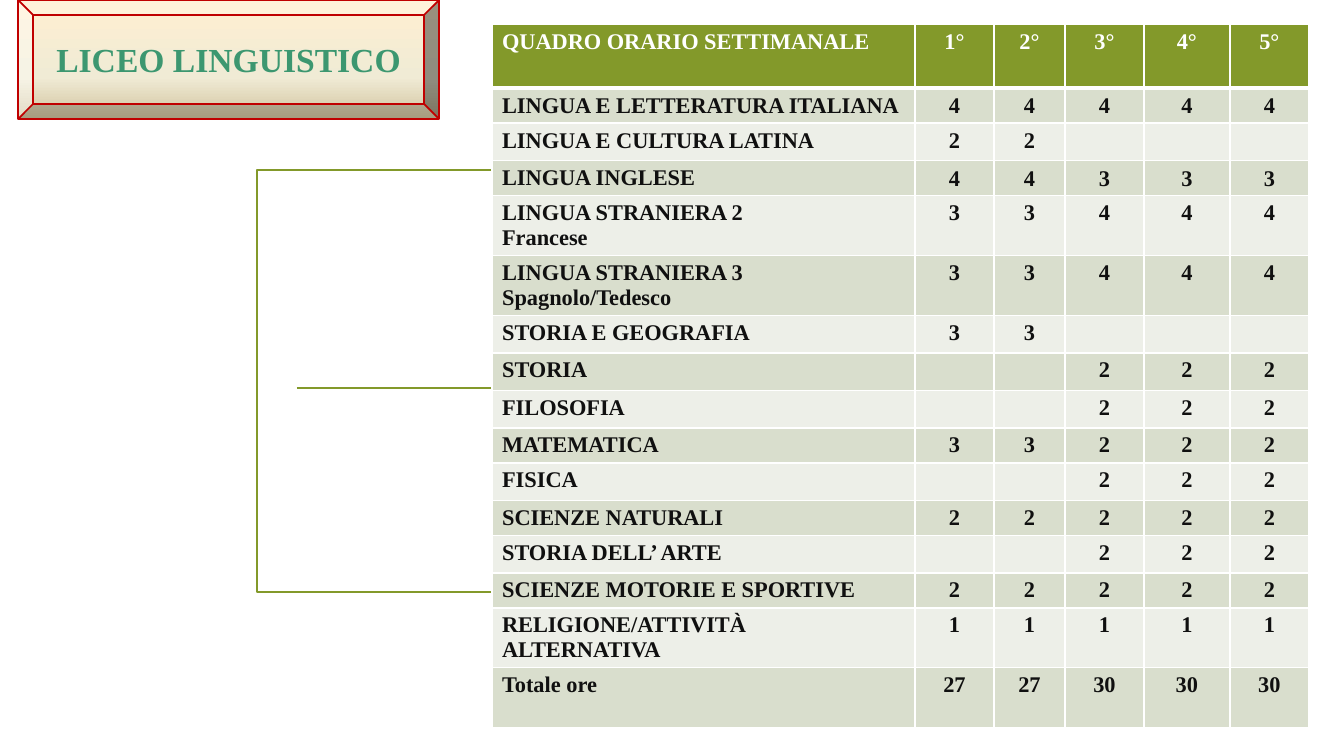
import copy
from dataclasses import dataclass

import pptx
import pptx.dml.color
import pptx.enum.shapes
import pptx.enum.text
import pptx.oxml
import pptx.oxml.ns
import pptx.util
from lxml import etree

qn = pptx.oxml.ns.qn
SHAPES = pptx.enum.shapes.MSO_SHAPE
ALIGN = pptx.enum.text.PP_ALIGN
MIDDLE = pptx.enum.text.MSO_ANCHOR.MIDDLE


@dataclass(frozen=True)
class Theme:
    font: str = "Times New Roman"
    title_size: int = 24
    table_size: int = 16
    line_width: float = 1.25
    grid_width: int = 1
    header_rule: int = 3
    green: str = "83992A"
    title_green: str = "3C9770"
    red: str = "C00000"
    white: str = "FFFFFF"
    ink: str = "101010"
    bands: tuple = ("D9DECD", "EDEFE8")
    cream: tuple = ((0, "FFEFD1"), (0.65, "F0EBD5"), (1, "D1C39F"))


def px(length):
    return pptx.util.Emu(round(length * 914400 / 100.8))


def rgb(code):
    return pptx.dml.color.RGBColor.from_string(code)


class Sheet:
    def __init__(self, slide, theme):
        self.slide = slide
        self.theme = theme

    def outline(self, line, color):
        line.color.rgb = rgb(color)
        line.width = pptx.util.Pt(self.theme.line_width)

    def set_text(self, frame, text, size, color, align):
        frame.text = text
        for paragraph in frame.paragraphs:
            paragraph.alignment = align
            for run in paragraph.runs:
                run.font.name = self.theme.font
                run.font.size = pptx.util.Pt(size)
                run.font.bold = True
                run.font.color.rgb = rgb(color)
            if not paragraph.runs:
                # An empty cell keeps the row low only with its own type size
                etree.SubElement(paragraph._p, qn("a:endParaRPr"), sz=str(size * 100))

    def frame(self, left, top, width, height):
        bracket = self.slide.shapes.add_shape(
            SHAPES.RECTANGLE, px(left), px(top), px(width), px(height))
        bracket.shadow.inherit = False
        bracket.fill.background()
        self.outline(bracket.line, self.theme.green)

    def rule(self, left, right, y):
        branch = self.slide.shapes.add_connector(
            pptx.enum.shapes.MSO_CONNECTOR.STRAIGHT, px(left), px(y), px(right), px(y))
        self.outline(branch.line, self.theme.green)
        etree.SubElement(branch._element.spPr, qn("a:effectLst"))

    def plaque(self, text, left, top, width, height):
        """Bevelled title plate with a vertical gradient."""
        plate = self.slide.shapes.add_shape(
            SHAPES.BEVEL, px(left), px(top), px(width), px(height))
        plate.shadow.inherit = False
        plate.fill.gradient()
        plate.fill.gradient_angle = 270
        stop_list = plate._element.spPr.find(".//" + qn("a:gsLst"))
        stop_list.append(copy.deepcopy(stop_list[-1]))
        for stop, (position, color) in zip(stop_list, self.theme.cream):
            stop.set("pos", str(round(position * 100000)))
            for old_color in list(stop):
                stop.remove(old_color)
            etree.SubElement(stop, qn("a:srgbClr"), val=color)
        self.outline(plate.line, self.theme.red)
        plate.text_frame.word_wrap = True
        plate.text_frame.vertical_anchor = MIDDLE
        self.set_text(plate.text_frame, text, self.theme.title_size,
                      self.theme.title_green, ALIGN.CENTER)

    def borders(self, cell, top, bottom):
        properties = cell._tc.get_or_add_tcPr()
        widths = {"L": self.theme.grid_width, "R": self.theme.grid_width,
                  "T": top, "B": bottom}
        for place, (side, width) in enumerate(widths.items()):
            edge = etree.Element(qn("a:ln" + side), w=str(pptx.util.Pt(width)))
            fill = etree.SubElement(edge, qn("a:solidFill"))
            etree.SubElement(fill, qn("a:srgbClr"), val=self.theme.white)
            properties.insert(place, edge)

    def timetable(self, left, top, widths, rows, heights, centred_subject):
        theme = self.theme
        grid = self.slide.shapes.add_table(
            len(rows), len(widths), px(left), px(top),
            px(sum(widths)), px(sum(heights))).table
        for column, width in zip(grid.columns, widths):
            column.width = px(width)
        for r, (subject, *hours) in enumerate(rows):
            grid.rows[r].height = px(heights[r])
            fill = theme.bands[(r - 1) % 2] if r else theme.green
            for c, text in enumerate([subject, *hours]):
                cell = grid.cell(r, c)
                cell.fill.solid()
                cell.fill.fore_color.rgb = rgb(fill)
                self.borders(cell,
                             theme.header_rule if r == 1 else theme.grid_width,
                             theme.header_rule if r == 0 else theme.grid_width)
                self.set_text(cell.text_frame, text, theme.table_size,
                              theme.ink if r else theme.white,
                              ALIGN.CENTER if c else ALIGN.LEFT)
                if c and subject == centred_subject:
                    self.centre(cell)

    def centre(self, cell):
        cell.vertical_anchor = MIDDLE
        cell.margin_left = cell.margin_right = 0
        cell.margin_top = cell.margin_bottom = 0
        cell.text_frame.paragraphs[0].line_spacing = 1.1
        cell.text_frame.paragraphs[0].space_after = pptx.util.Pt(14)


def year_hours(first_two, last_three):
    return [first_two] * 2 + [last_three] * 3


SUBJECTS = [
    ("LINGUA E LETTERATURA ITALIANA", "4", "4"),
    ("LINGUA E CULTURA LATINA", "2", ""),
    ("LINGUA INGLESE", "4", "3"),
    ("LINGUA STRANIERA 2\nFrancese", "3", "4"),
    ("LINGUA STRANIERA 3\nSpagnolo/Tedesco", "3", "4"),
    ("STORIA E GEOGRAFIA", "3", ""),
    ("STORIA", "", "2"),
    ("FILOSOFIA", "", "2"),
    ("MATEMATICA", "3", "2"),
    ("FISICA", "", "2"),
    ("SCIENZE NATURALI", "2", "2"),
    ("STORIA DELL’ ARTE", "", "2"),
    ("SCIENZE MOTORIE E SPORTIVE", "2", "2"),
    ("RELIGIONE/ATTIVITÀ ALTERNATIVA", "1", "1"),
    ("Totale ore", "27", "30"),
]


def main():
    deck = pptx.Presentation()
    deck.slide_width, deck.slide_height = px(1344), px(756)
    sheet = Sheet(deck.slides.add_slide(deck.slide_layouts[6]), Theme())
    sheet.frame(257, 170, 832, 422)
    sheet.rule(297, 1048, 388)
    sheet.plaque("LICEO LINGUISTICO", 18, 0, 421, 119)
    header = ["QUADRO ORARIO SETTIMANALE"] + [f"{year}°" for year in range(1, 6)]
    rows = [header] + [[name, *year_hours(*hours)] for name, *hours in SUBJECTS]
    heights = [64] + [35] * 3 + [60] * 2 + [35] * 8 + [60] * 2
    sheet.timetable(492, 24, [423, 79, 71, 79, 86, 79], rows, heights,
                    "LINGUA INGLESE")
    deck.save("out.pptx")


if __name__ == "__main__":
    main()
